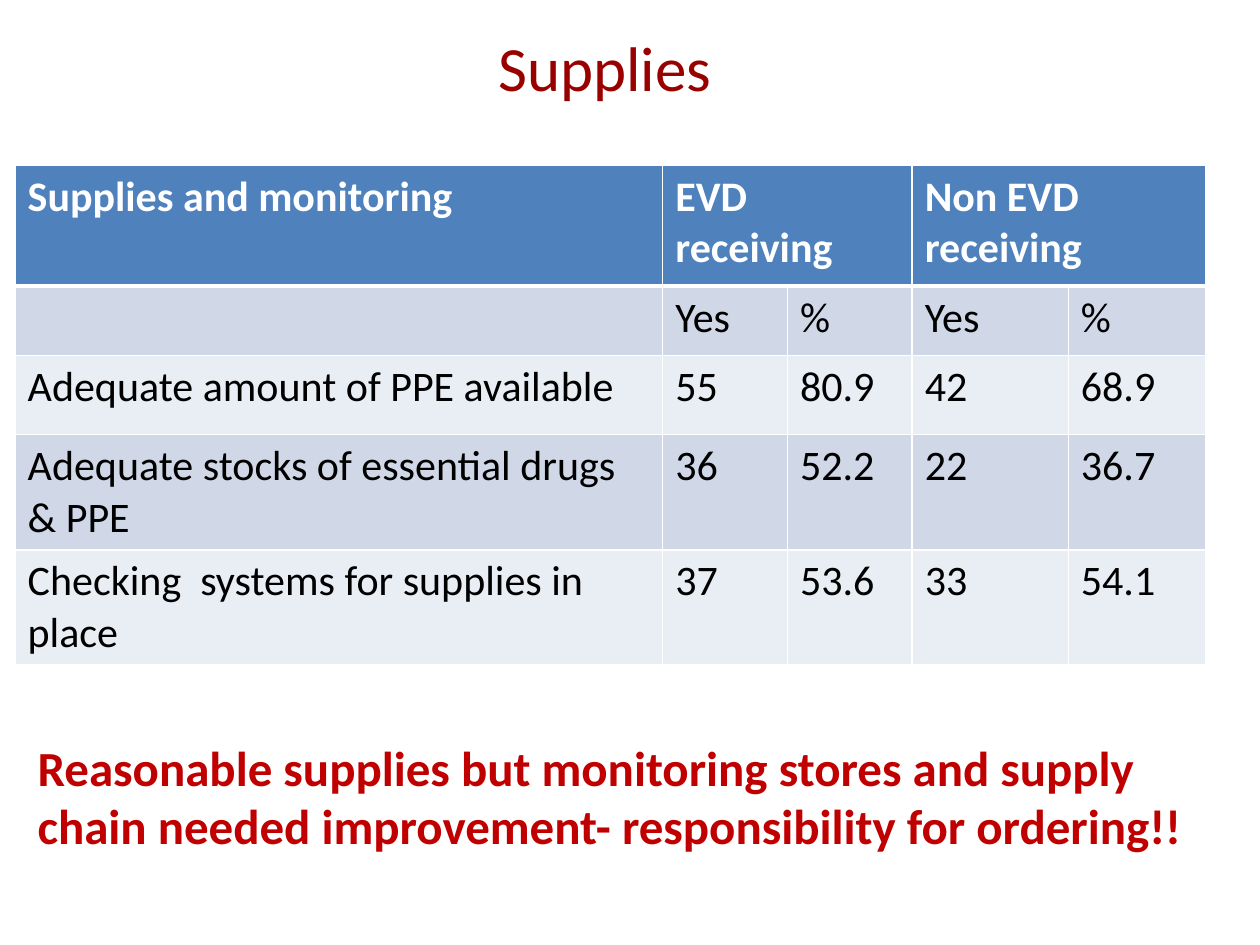
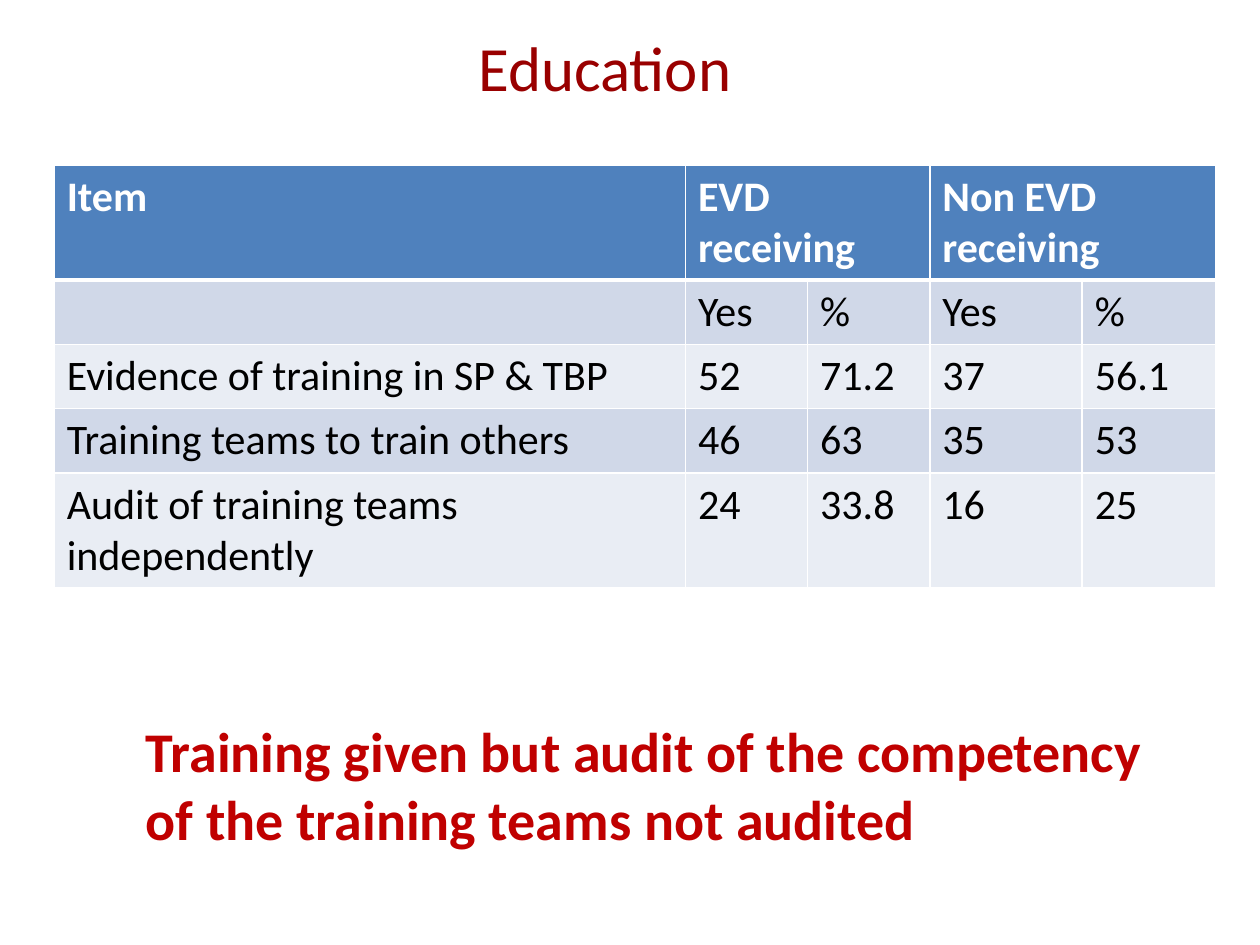
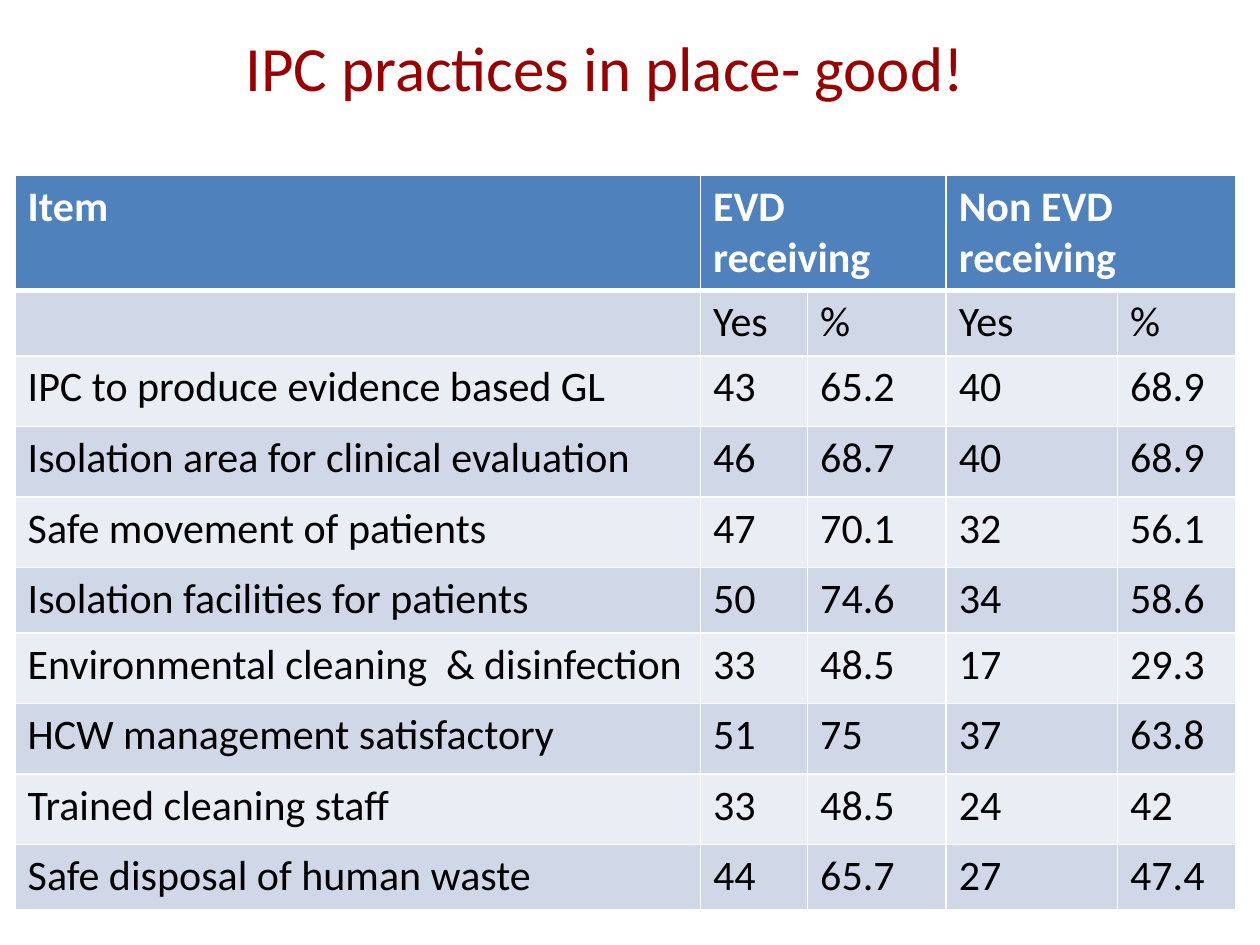
"""Build three slides of survey tables on supplies, education and IPC practices."""
from lxml import etree
from pptx import Presentation
from pptx.dml.color import RGBColor
from pptx.enum.text import MSO_ANCHOR, PP_ALIGN
from pptx.oxml.ns import qn
from pptx.util import Inches, Pt

CENTER, LEFT = PP_ALIGN.CENTER, PP_ALIGN.LEFT
MIDDLE = MSO_ANCHOR.MIDDLE
TITLE_ONLY = 5
FONT = "Calibri"
COLORS = {
    "title": "990000",
    "message": "C00000",
    "header": "4F81BD",
    "band_dark": "D0D8E8",
    "band_light": "E9EDF4",
    "white": "FFFFFF",
    "black": "000000",
}
HEADINGS = ["EVD receiving", "", "Non EVD receiving", ""]
SUBHEADINGS = ["", "Yes", "%", "Yes", "%"]

PAGES = [
    {
        "title": "Supplies",
        "item": "Supplies and monitoring",
        "left": 0.12, "top": 1.31,
        "columns": [5.14, 0.99, 0.99, 1.24, 1.09],
        "heights": [0.96, 0.55, 0.63, 0.91, 0.91],
        "rows": [
            ["Adequate amount of PPE available", "55", "80.9", "42", "68.9"],
            ["Adequate stocks of essential drugs & PPE", "36", "52.2", "22", "36.7"],
            ["Checking  systems for supplies in place", "37", "53.6", "33", "54.1"],
        ],
        "message": "Reasonable supplies but monitoring stores and supply chain "
                   "needed improvement- responsibility for ordering!!",
        "message_area": [0.2, 5.8, 9.29, 1.51], "message_size": 28,
    },
    {
        "title": "Education",
        "item": "Item",
        "left": 0.43, "top": 1.31,
        "columns": [5.01, 0.97, 0.97, 1.21, 1.06],
        "heights": [0.9, 0.51, 0.51, 0.51, 0.91],
        "rows": [
            ["Evidence of training in SP & TBP", "52", "71.2", "37", "56.1"],
            ["Training teams to train others", "46", "63", "35", "53"],
            ["Audit of training teams independently", "24", "33.8", "16", "25"],
        ],
        "message": "Training given but audit of the competency of the training "
                   "teams not audited",
        "message_area": [1.06, 5.64, 8.27, 1.18], "message_size": 32,
    },
    {
        "title": "IPC practices in place- good!",
        "item": "Item",
        "left": 0.12, "top": 1.39,
        "columns": [5.44, 0.85, 1.1, 1.36, 0.94],
        "heights": [0.9, 0.52, 0.56, 0.56, 0.56, 0.52, 0.56, 0.56, 0.56, 0.52],
        "rows": [
            ["IPC to produce evidence based GL", "43", "65.2", "40", "68.9"],
            ["Isolation area for clinical evaluation", "46", "68.7", "40", "68.9"],
            ["Safe movement of patients", "47", "70.1", "32", "56.1"],
            ["Isolation facilities for patients", "50", "74.6", "34", "58.6"],
            ["Environmental cleaning  & disinfection", "33", "48.5", "17", "29.3"],
            ["HCW management satisfactory", "51", "75", "37", "63.8"],
            ["Trained cleaning staff", "33", "48.5", "24", "42"],
            ["Safe disposal of human waste", "44", "65.7", "27", "47.4"],
        ],
    },
]


def write_text(frame, text, size=24, color="black", bold=False, align=LEFT):
    para = frame.paragraphs[0]
    para.alignment = align
    span = para.add_run()
    span.text = text
    span.font.name = FONT
    span.font.size = Pt(size)
    span.font.bold = bold
    span.font.color.rgb = RGBColor.from_string(COLORS[color])


def style_cell(cell, fill, top=1, bottom=1):
    properties = cell._tc.get_or_add_tcPr()
    for side, width in (("L", 1), ("R", 1), ("T", top), ("B", bottom)):
        line = etree.SubElement(properties, qn(f"a:ln{side}"), w=str(Pt(width)))
        solid = etree.SubElement(line, qn("a:solidFill"))
        etree.SubElement(solid, qn("a:srgbClr"), val=COLORS["white"])
    cell.fill.solid()
    cell.fill.fore_color.rgb = RGBColor.from_string(COLORS[fill])


deck = Presentation()
deck.slide_width, deck.slide_height = Inches(10), Inches(7.5)

for content in PAGES:
    page = deck.slides.add_slide(deck.slide_layouts[TITLE_ONLY])
    title = page.shapes.title
    title.left, title.top = Inches(0.9), Inches(0.13)
    title.width, title.height = Inches(7.8), Inches(0.79)
    title.text_frame.vertical_anchor = MIDDLE
    write_text(title.text_frame, content["title"], size=36, color="title", align=CENTER)

    columns, heights = content["columns"], content["heights"]
    area = [content["left"], content["top"], sum(columns), sum(heights)]
    table = page.shapes.add_table(
        len(heights), len(columns), *map(Inches, area)).table
    for column, width in zip(table.columns, columns):
        column.width = Inches(width)
    for row, height in zip(table.rows, heights):
        row.height = Inches(height)

    rows = [[content["item"], *HEADINGS], SUBHEADINGS, *content["rows"]]
    for row_index, values in enumerate(rows):
        is_header = row_index == 0
        band = "band_dark" if row_index % 2 else "band_light"
        for column_index, value in enumerate(values):
            cell = table.cell(row_index, column_index)
            style_cell(cell, "header" if is_header else band,
                       top=3 if row_index == 1 else 1,
                       bottom=3 if is_header else 1)
            if value:
                write_text(cell.text_frame, value, bold=is_header,
                           color="white" if is_header else "black")
    for first in (1, 3):
        table.cell(0, first).merge(table.cell(0, first + 1))

    if "message" in content:
        box = page.shapes.add_textbox(*map(Inches, content["message_area"]))
        box.text_frame.word_wrap = True
        write_text(box.text_frame, content["message"], size=content["message_size"],
                   color="message", bold=True)

deck.save("out.pptx")
